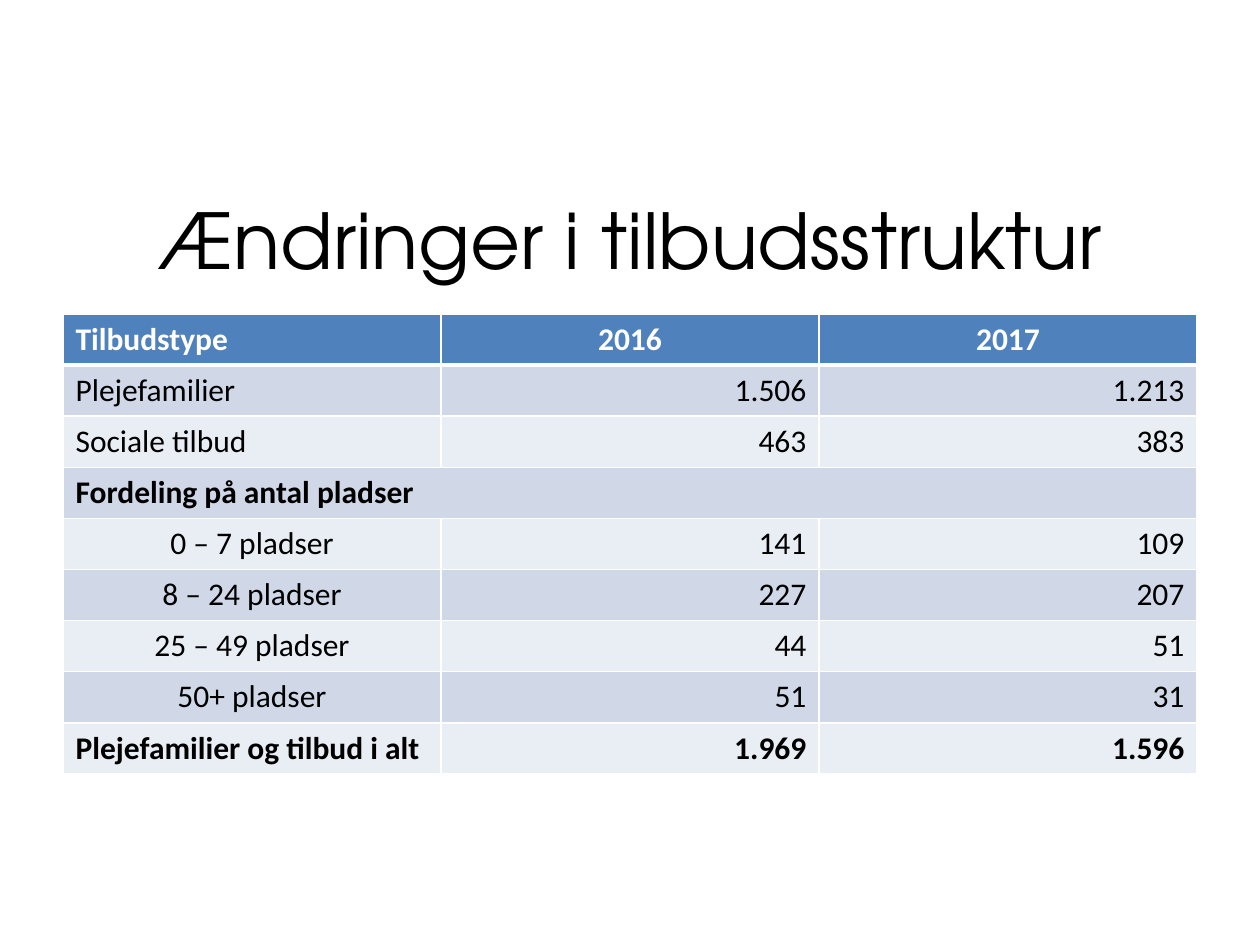
from dataclasses import dataclass

from lxml import etree
from pptx import Presentation
from pptx import util as u
from pptx.dml.color import RGBColor
from pptx.enum import text as t
from pptx.oxml import ns

LEFT, MID, RIGHT = t.PP_ALIGN.LEFT, t.PP_ALIGN.CENTER, t.PP_ALIGN.RIGHT


@dataclass(frozen=True)
class Theme:
    black: str = "000000"
    white: str = "FFFFFF"
    head: str = "4F81BD"
    bands: tuple = ("D0D8E8", "E9EDF4")
    title: str = "TeX Gyre Adventor"
    body: str = "Calibri"
    big: int = 44
    small: int = 18
    thin: int = 1
    thick: int = 3


THEME = Theme()

# label, 2016, 2017, label alignment, bold
ROWS = [
    ("Plejefamilier", "1.506", "1.213", LEFT, False),
    ("Sociale tilbud", "463", "383", LEFT, False),
    ("Fordeling på antal pladser", "", "", LEFT, True),
    ("0 – 7 pladser", "141", "109", MID, False),
    ("8 – 24 pladser", "227", "207", MID, False),
    ("25 – 49 pladser", "44", "51", MID, False),
    ("50+ pladser", "51", "31", MID, False),
    ("Plejefamilier og tilbud i alt", "1.969", "1.596", LEFT, True),
]


def write(frame, words, font=THEME.body, size=THEME.small, color=THEME.black,
          bold=False, align=LEFT):
    para = frame.paragraphs[0]
    para.alignment = align
    run = para.add_run()
    run.text = words
    run.font.name = font
    run.font.size = u.Pt(size)
    run.font.bold = bold
    run.font.color.rgb = RGBColor.from_string(color)


def edge(cell, top, base):
    """Draw white borders, with the top and bottom widths in points."""
    props = cell._tc.get_or_add_tcPr()
    sides = {"lnL": THEME.thin, "lnR": THEME.thin, "lnT": top, "lnB": base}
    for side, width in sides.items():
        line = etree.SubElement(props, ns.qn(f"a:{side}"), w=str(u.Pt(width)))
        fill = etree.SubElement(line, ns.qn("a:solidFill"))
        etree.SubElement(fill, ns.qn("a:srgbClr"), val=THEME.white)


def paint(cell, fill, top=THEME.thin, base=THEME.thin):
    edge(cell, top, base)
    cell.fill.solid()
    cell.fill.fore_color.rgb = RGBColor.from_string(fill)


def add_title(slide, words):
    box = slide.shapes.add_textbox(u.Cm(1.27), u.Cm(3.28), u.Cm(22.86), u.Cm(3.05))
    frame = box.text_frame
    frame.word_wrap = True
    frame.vertical_anchor = t.MSO_ANCHOR.MIDDLE
    write(frame, words, font=THEME.title, size=THEME.big, align=MID)


def add_grid(slide, heads, rows):
    count = len(rows) + 1
    high = u.Cm(1.03)
    grid = slide.shapes.add_table(count, len(heads), u.Cm(1.27), u.Cm(6.33),
                                  u.Cm(22.86), high * count).table
    for row in grid.rows:
        row.height = high

    for col, words in enumerate(heads):
        cell = grid.cell(0, col)
        paint(cell, THEME.head, base=THEME.thick)
        write(cell.text_frame, words, color=THEME.white, bold=True,
              align=MID if col else LEFT)

    for num, (label, old, new, align, bold) in enumerate(rows, 1):
        band = THEME.bands[(num - 1) % 2]
        for col, words in enumerate((label, old, new)):
            cell = grid.cell(num, col)
            paint(cell, band, top=THEME.thick if num == 1 else THEME.thin)
            if words:
                write(cell.text_frame, words, bold=bold,
                      align=RIGHT if col else align)
        if not old:
            grid.cell(num, 0).merge(grid.cell(num, len(heads) - 1))


def main():
    deck = Presentation()
    deck.slide_width, deck.slide_height = u.Cm(25.4), u.Cm(19.05)
    slide = deck.slides.add_slide(deck.slide_layouts[6])
    add_title(slide, "Ændringer i tilbudsstruktur")
    add_grid(slide, ("Tilbudstype", "2016", "2017"), ROWS)
    deck.save("out.pptx")


if __name__ == "__main__":
    main()
